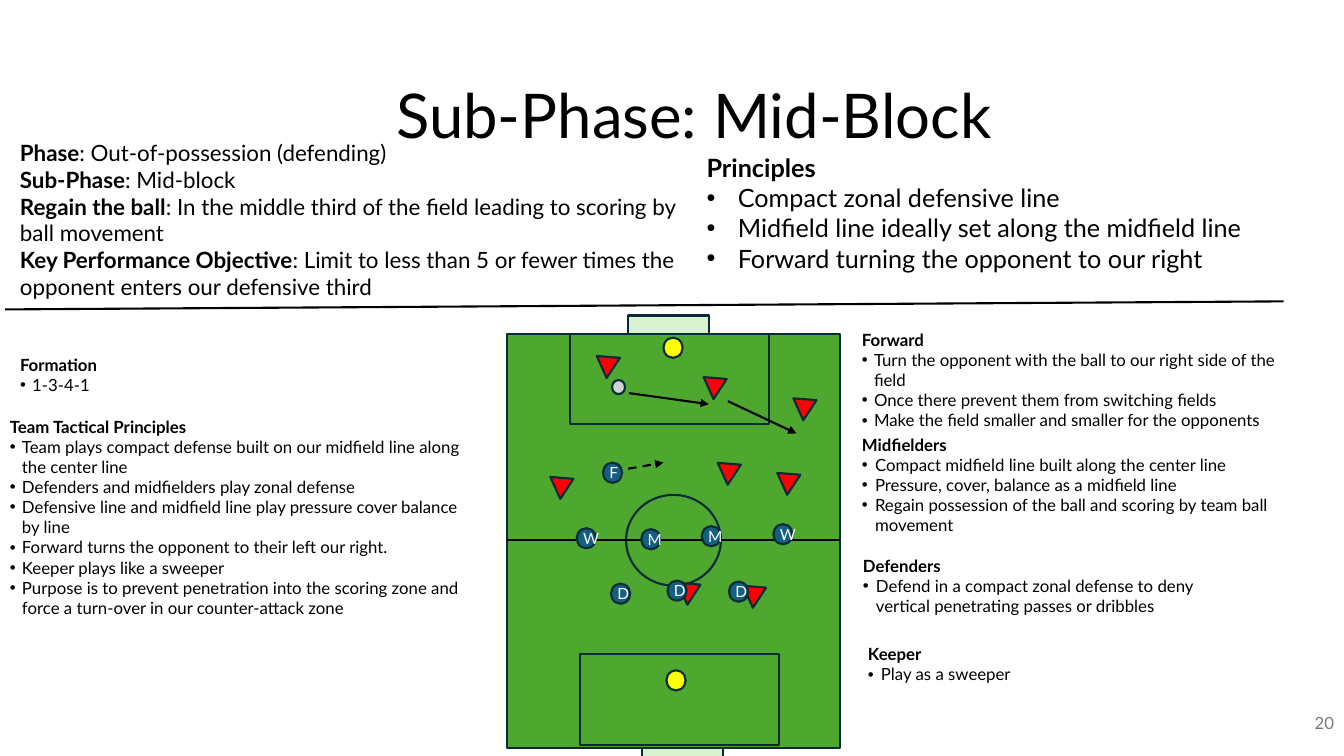
"""Build the mid-block sub-phase slide with its soccer pitch diagram."""
from lxml import etree
from pptx import Presentation
from pptx.dml.color import RGBColor
from pptx.enum.dml import MSO_LINE_DASH_STYLE as DASH
from pptx.enum.shapes import MSO_CONNECTOR, MSO_SHAPE as SHAPE
from pptx.enum.text import MSO_ANCHOR as ANCHOR, PP_ALIGN as ALIGN
from pptx.oxml.ns import qn
from pptx.util import Inches, Pt

FONT = "Lato"
BLACK = RGBColor(0x00, 0x00, 0x00)
WHITE = RGBColor(0xFF, 0xFF, 0xFF)
GRAY = RGBColor(0x79, 0x79, 0x79)
NAVY = RGBColor(0x09, 0x2A, 0x39)
GRASS = RGBColor(0x4E, 0xA7, 0x2E)
GOAL = RGBColor(0xD9, 0xF2, 0xD0)
BLUE = RGBColor(0x15, 0x60, 0x82)
RED = RGBColor(0xFF, 0x00, 0x00)
YELLOW = RGBColor(0xFF, 0xFF, 0x00)
BALL = RGBColor(0xD1, 0xD1, 0xD1)

TITLE = "Sub-Phase: Mid-Block"
PAGE_NUMBER = "20"
FACTS = [
    ("Phase", ": Out-of-possession (defending)"),
    ("Sub-Phase", ": Mid-block"),
    ("Regain the ball", ": In the middle third of the field leading to scoring by ball movement"),
    ("Key Performance Objective",
     ": Limit to less than 5 or fewer times the opponent enters our defensive third"),
]
PANELS = [
    ((6.91, 1.46, 6.42, 1.31), 18, 0.31, "Principles", [
        "Compact zonal defensive line",
        "Midfield line ideally set along the midfield line",
        "Forward turning the opponent to our right"]),
    ((0.1, 3.47, 4.09, 0.5), 12, 0.12, "Formation", ["1-3-4-1"]),
    ((0, 4.08, 4.77, 2.12), 12, 0.12, "Team Tactical Principles", [
        "Team plays compact defense built on our midfield line along the center line",
        "Defenders and midfielders play zonal defense",
        "Defensive line and midfield line play pressure cover balance by line",
        "Forward turns the opponent to their left our right.",
        "Keeper plays like a sweeper",
        "Purpose is to prevent penetration into the scoring zone and force a turn-over "
        "in our counter-attack zone"]),
    ((8.45, 3.22, 4.65, 0.91), 12, 0.12, "Forward", [
        "Turn the opponent with the ball to our right side of the field",
        "Once there prevent them from switching fields",
        "Make the field smaller and smaller for the opponents"]),
    ((8.45, 4.26, 4.29, 1.11), 12, 0.13, "Midfielders", [
        "Compact midfield line built along the center line",
        "Pressure, cover, balance as a midfield line",
        "Regain possession of the ball and scoring by team ball movement"]),
    ((8.46, 5.46, 3.94, 0.71), 12, 0.13, "Defenders", [
        "Defend in a compact zonal defense to deny vertical penetrating passes or dribbles"]),
    ((8.51, 6.34, 3.94, 0.5), 12, 0.13, "Keeper", ["Play as a sweeper"]),
]
PITCH = [
    (SHAPE.RECTANGLE, (5.03, 3.31, 3.3, 4.11), GRASS),
    (SHAPE.RECTANGLE, (6.23, 3.13, 0.8, 0.18), GOAL),
    (SHAPE.RECTANGLE, (6.37, 7.42, 0.8, 0.18), GOAL),
    (SHAPE.RECTANGLE, (5.65, 3.31, 1.98, 0.9), None),
    (SHAPE.RECTANGLE, (5.75, 6.49, 1.98, 0.9), None),
    (SHAPE.OVAL, (6.21, 4.91, 0.94, 0.9), None),
]
HALFWAY = (5.03, 5.36, 8.33, 5.36)
DIVIDER = (0.05, 3.07, 12.73, 2.99)
RUN = (6.23, 4.65, 6.58, 4.59)
PASSES = [(6.24, 3.9, 7.03, 4.01), (7.22, 3.98, 7.9, 4.3)]
BALL_BOX = (6.07, 3.77, 0.13, 0.14)
PLAYER_SIZE = (0.19, 0.2)
OPPONENT_SIZE = (0.23, 0.21)
KEEPERS = [(6.61, 6.65), (6.58, 3.35)]
OPPONENTS = [(5.45, 4.74), (6.71, 5.79), (5.91, 3.54), (7.36, 5.82),
             (7.7, 4.7), (7.11, 4.6), (7.86, 3.96), (6.97, 3.75)]
PLAYERS = [
    ("F", 5.98, 4.59),
    ("W", 5.72, 5.24), ("M", 6.36, 5.25), ("M", 6.96, 5.22), ("W", 7.67, 5.2),
    ("D", 6.06, 5.79), ("D", 6.62, 5.76), ("D", 7.23, 5.77),
]


def add_shape(slide, kind, box, fill):
    sp = slide.shapes.add_shape(kind, *map(Inches, box))
    sp.shadow.inherit = False
    if fill is None:
        sp.fill.background()
    else:
        sp.fill.solid()
        sp.fill.fore_color.rgb = fill
    sp.line.color.rgb = NAVY
    sp.line.width = Pt(1.5)
    return sp


def add_line(slide, ends, arrow=False, dash=None):
    line = slide.shapes.add_connector(MSO_CONNECTOR.STRAIGHT, *map(Inches, ends))
    line.line.color.rgb = BLACK
    line.line.width = Pt(1.5)
    if dash is not None:
        line.line.dash_style = dash
    if arrow:
        etree.SubElement(line.line._get_or_add_ln(), qn("a:tailEnd"), type="triangle")
    etree.SubElement(line._element.spPr, qn("a:effectLst"))


def add_run(p, text, size, color=BLACK, bold=False):
    r = p.add_run()
    r.text = text
    r.font.name = FONT
    r.font.size = Pt(size)
    r.font.bold = bold
    r.font.color.rgb = color


def add_text_frame(slide, box, anchor=ANCHOR.TOP):
    tf = slide.shapes.add_textbox(*map(Inches, box)).text_frame
    tf.word_wrap = True
    tf.vertical_anchor = anchor
    return tf


def add_line_of_text(slide, box, text, size, color, align):
    p = add_text_frame(slide, box, ANCHOR.MIDDLE).paragraphs[0]
    p.alignment = align
    add_run(p, text, size, color)


def add_facts(slide, box, facts):
    tf = add_text_frame(slide, box)
    for i, (label, detail) in enumerate(facts):
        p = tf.add_paragraph() if i else tf.paragraphs[0]
        add_run(p, label, 16, bold=True)
        add_run(p, detail, 16)


def add_panel(slide, box, size, indent, heading, bullets):
    tf = add_text_frame(slide, box)
    add_run(tf.paragraphs[0], heading, size, bold=True)
    for text in bullets:
        p = tf.add_paragraph()
        pPr = p._p.get_or_add_pPr()
        pPr.set("marL", str(Inches(indent)))
        pPr.set("indent", str(-Inches(indent)))
        etree.SubElement(pPr, qn("a:buFont"), typeface="Arial")
        etree.SubElement(pPr, qn("a:buChar"), char="•")
        add_run(p, text, size)


def add_player(slide, role, x, y):
    sp = add_shape(slide, SHAPE.OVAL, (x, y, *PLAYER_SIZE), BLUE)
    tf = sp.text_frame
    tf.word_wrap = True
    tf.vertical_anchor = ANCHOR.MIDDLE
    tf.paragraphs[0].alignment = ALIGN.CENTER
    add_run(tf.paragraphs[0], role, 11, WHITE)


def main():
    prs = Presentation()
    prs.slide_width = Inches(13.33)
    prs.slide_height = Inches(7.5)
    slide = prs.slides.add_slide(prs.slide_layouts[6])

    for kind, box, fill in PITCH:
        add_shape(slide, kind, box, fill)
    add_line(slide, HALFWAY)

    add_line_of_text(slide, (1.35, 0.4, 11.07, 1.45), TITLE, 44, BLACK, ALIGN.CENTER)
    add_line_of_text(slide, (10.33, 6.97, 3, 0.4), PAGE_NUMBER, 12, GRAY, ALIGN.RIGHT)
    add_facts(slide, (0.1, 1.33, 6.93, 1.72), FACTS)
    add_line(slide, DIVIDER)
    for panel in PANELS:
        add_panel(slide, *panel)

    for spot in KEEPERS:
        add_shape(slide, SHAPE.OVAL, (*spot, *PLAYER_SIZE), YELLOW)
    add_shape(slide, SHAPE.OVAL, BALL_BOX, BALL)
    for spot in OPPONENTS:
        sp = add_shape(slide, SHAPE.ISOSCELES_TRIANGLE, (*spot, *OPPONENT_SIZE), RED)
        sp.rotation = 184.5
    add_line(slide, RUN, arrow=True, dash=DASH.DASH)
    for ends in PASSES:
        add_line(slide, ends, arrow=True)
    for player in PLAYERS:
        add_player(slide, *player)

    prs.save("out.pptx")


if __name__ == "__main__":
    main()
